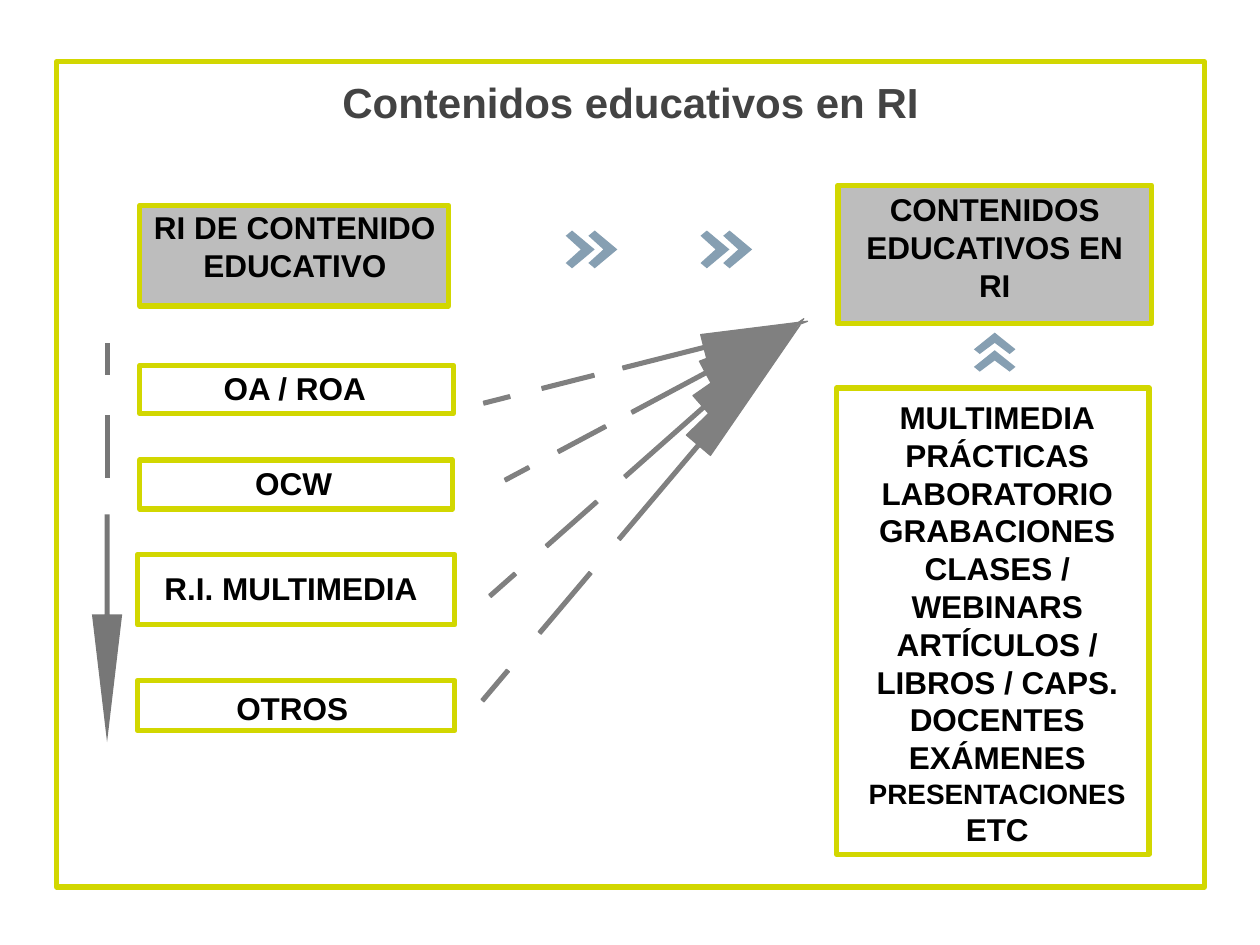
from math import hypot

from pptx import Presentation
from pptx.dml.color import RGBColor
from pptx.enum.shapes import MSO_SHAPE
from pptx.enum.text import MSO_ANCHOR, MSO_AUTO_SIZE, PP_ALIGN
from pptx.util import Inches, Pt

RECT = MSO_SHAPE.RECTANGLE
TOP, BOTTOM = MSO_ANCHOR.TOP, MSO_ANCHOR.BOTTOM
CENTER, NO_FIT = PP_ALIGN.CENTER, MSO_AUTO_SIZE.NONE
LIME, SILVER, BLUE, GREY, DARK_GREY = "D2D700", "BDBDBD", "869FB2", "808080", "777777"

TITLE = ("Contenidos educativos en RI", (0.45, 0.51, 9.11, 0.7))
FRAME = (0.45, 0.49, 9.11, 6.55)
PANELS = [
    ((6.65, 1.47, 2.49, 1.1), SILVER, (6.74, 1.57, 2.31, 0.94), BOTTOM,
     [("CONTENIDOS EDUCATIVOS EN RI", 18)]),
    ((1.11, 1.63, 2.45, 0.8), SILVER, (1.1, 1.76, 2.48, 0.59), BOTTOM,
     [("RI DE CONTENIDO EDUCATIVO", 18)]),
    ((1.11, 2.9, 2.49, 0.38), None, (1.1, 3, 2.48, 0.33), BOTTOM, [("OA / ROA", 18)]),
    ((1.11, 3.65, 2.48, 0.39), None, (1.09, 3.75, 2.48, 0.33), BOTTOM, [("OCW", 18)]),
    ((1.09, 4.4, 2.52, 0.56), None, (1.08, 4.52, 2.46, 0.4), BOTTOM,
     [("R.I. MULTIMEDIA", 18)]),
    ((1.09, 5.4, 2.52, 0.4), None, (1.1, 5.37, 2.44, 0.45), TOP, [("OTROS", 18)]),
    ((6.64, 3.08, 2.48, 3.7), None, (6.76, 3.06, 2.31, 3.73), TOP,
     [("MULTIMEDIA", 18), ("PRÁCTICAS LABORATORIO", 18),
      ("GRABACIONES CLASES / WEBINARS", 18),
      ("ARTÍCULOS / LIBROS / CAPS. DOCENTES", 18), ("EXÁMENES", 18),
      ("PRESENTACIONES", 16), ("ETC", 18)]),
]
CHEVRON = [(0.22, 0), (0, 0.14), (0.52, 0.5), (0, 0.86), (0.22, 1), (1, 0.5)]
RIGHT_CHEVRONS = [(x + dx, 1.83) for x in (4.49, 5.56) for dx in (0, 0.18)]
UP_CHEVRONS = [(7.73, 2.78), (7.73, 2.64)]
ARROWS = [
    dict(tail=(3.84, 3.2), tip=(6.41, 2.55), head=0.21, thick=0.03, color=GREY, outline=0.75),
    dict(tail=(3.89, 4.73), tip=(6.38, 2.53), head=0.25, thick=0.03, color=GREY, outline=0.75),
    dict(tail=(4.01, 3.81), tip=(6.35, 2.56), head=0.21, thick=0.03, color=GREY, outline=0.75),
    dict(tail=(3.83, 5.56), tip=(6.35, 2.58), head=0.25, thick=0.03, color=GREY, outline=0.75),
    dict(tail=(0.85, 2.72), tip=(0.85, 5.89), head=0.24, thick=0.04, color=DARK_GREY),
]
DASHES = [(0, 0.08), (0.18, 0.34)]
SHAFT, HEAD = 0.43, 0.68


def rgb(value):
    """Turn a hex string into a colour."""
    return RGBColor.from_string(value)


def paint(sp, fill=None, line=None, width=0):
    """Set fill and outline, and remove the shadow."""
    sp.shadow.inherit = False
    if fill:
        sp.fill.solid()
        sp.fill.fore_color.rgb = rgb(fill)
    else:
        sp.fill.background()
    if line:
        sp.line.color.rgb = rgb(line)
        sp.line.width = Pt(width)
    else:
        sp.line.fill.background()


def write(sp, paragraphs, anchor, color="000000"):
    """Fill a text shape with centred bold paragraphs."""
    tf = sp.text_frame
    inset = Inches(0.1)
    frame = dict(word_wrap=True, auto_size=NO_FIT, vertical_anchor=anchor,
                 margin_left=inset, margin_right=inset,
                 margin_top=inset, margin_bottom=inset)
    for name, value in frame.items():
        setattr(tf, name, value)
    for i, (text, size) in enumerate(paragraphs):
        p = tf.add_paragraph() if i else tf.paragraphs[0]
        layout = dict(alignment=CENTER, line_spacing=1.0,
                      space_before=Pt(0), space_after=Pt(0))
        for name, value in layout.items():
            setattr(p, name, value)
        r = p.add_run()
        r.text = text
        for name, value in dict(name="Arial", size=Pt(size), bold=True).items():
            setattr(r.font, name, value)
        r.font.color.rgb = rgb(color)


def add_box(s, area, fill=None):
    """Add a lime-outlined rectangle."""
    paint(s.shapes.add_shape(RECT, *map(Inches, area)), fill, LIME, 3)


def add_polygon(s, points, fill, outline=None):
    """Add a closed outline through points in inches."""
    points = [(Inches(x), Inches(y)) for x, y in points]
    builder = s.shapes.build_freeform(*points[0], scale=1.0)
    builder.add_line_segments(points[1:], close=True)
    paint(builder.convert_to_shape(), fill, fill if outline else None, outline)


def add_dashed_arrow(s, tail, tip, head, thick, color, outline=None):
    """Add two dashes and a headed shaft along the line from tail to tip."""
    dx, dy = tip[0] - tail[0], tip[1] - tail[1]
    length = hypot(dx, dy)
    half, wing = thick / 2, head / 2
    pieces = [[(a, -half), (b, -half), (b, half), (a, half)] for a, b in DASHES]
    pieces.append([(SHAFT, -half), (HEAD, -half), (HEAD, -wing), (1, 0),
                   (HEAD, wing), (HEAD, half), (SHAFT, half)])
    for piece in pieces:
        points = [(tail[0] + t * dx - n * dy / length,
                   tail[1] + t * dy + n * dx / length) for t, n in piece]
        add_polygon(s, points, color, outline)


def main():
    """Build the slide and save it."""
    prs = Presentation()
    prs.slide_width, prs.slide_height = Inches(10), Inches(7.5)
    s = prs.slides.add_slide(prs.slide_layouts[5])
    title = s.shapes.title
    text, area = TITLE
    title.left, title.top, title.width, title.height = map(Inches, area)
    write(title, [(text, 24)], TOP, "434343")
    add_box(s, FRAME)
    for box, fill, area, anchor, paragraphs in PANELS:
        add_box(s, box, fill)
        write(s.shapes.add_textbox(*map(Inches, area)), paragraphs, anchor)
    for x, y in RIGHT_CHEVRONS:
        add_polygon(s, [(x + 0.23 * u, y + 0.3 * v) for u, v in CHEVRON], BLUE)
    for x, y in UP_CHEVRONS:
        add_polygon(s, [(x + 0.33 * v, y + 0.17 * (1 - u)) for u, v in CHEVRON], BLUE)
    for arrow in ARROWS:
        add_dashed_arrow(s, **arrow)
    prs.save("out.pptx")


if __name__ == "__main__":
    main()
